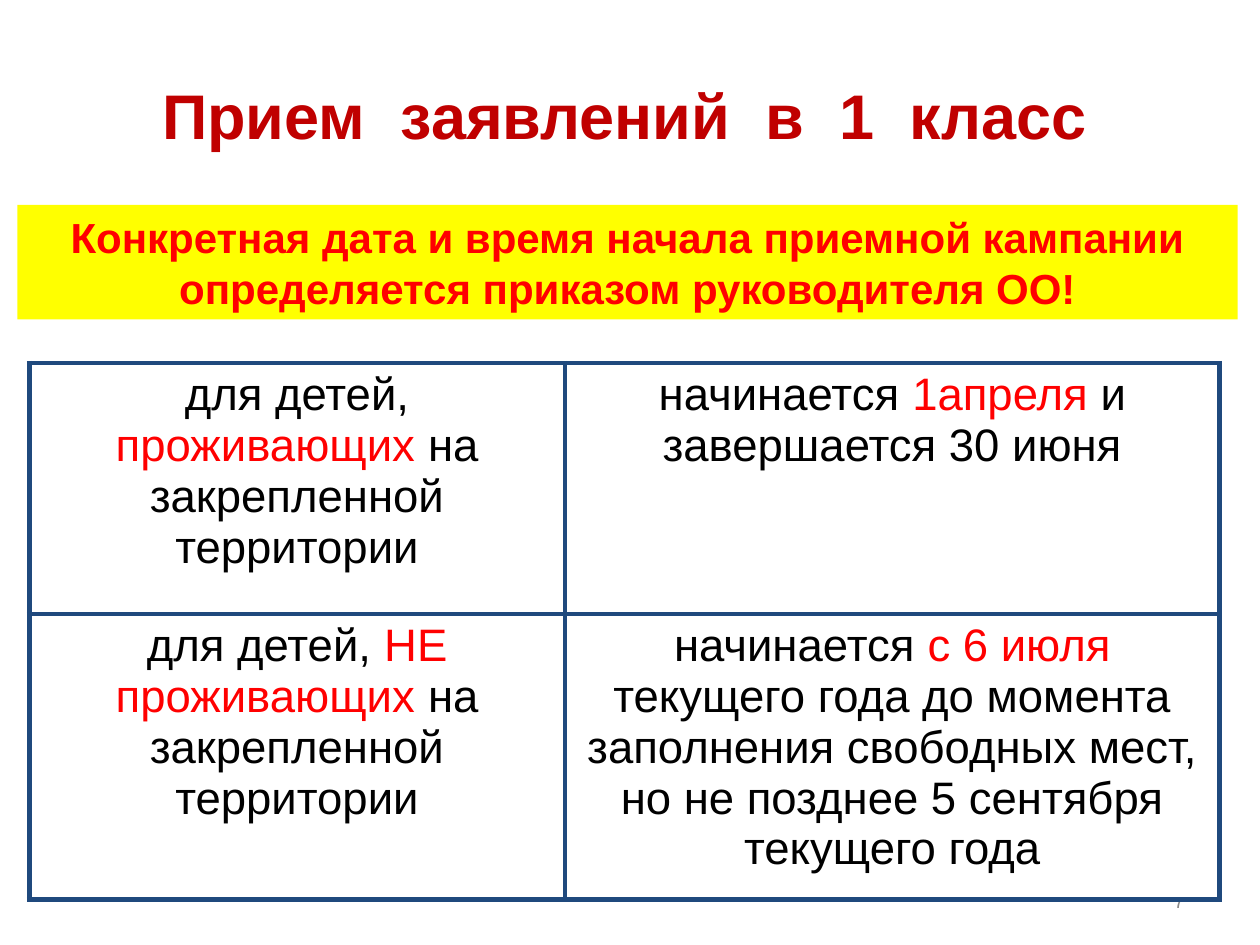
from itertools import product
from dataclasses import dataclass
from lxml.etree import SubElement
from pptx import Presentation
from pptx.dml.color import RGBColor
from pptx.enum.shapes import MSO_SHAPE
from pptx.enum.text import MSO_ANCHOR, PP_ALIGN
from pptx.oxml.ns import qn
from pptx.util import Cm, Pt

TITLE = ["Прием", "заявлений", "в", "1", "класс"]
NOTE = ("Конкретная дата и время начала приемной кампании "
        "определяется приказом руководителя ОО!")
PAGE = "7"
ROWS = [
    [("для детей, ", "проживающих", " на закрепленной территории"),
     ("начинается ", "1апреля ", "и завершается 30 июня")],
    [("для детей, ", "НЕ проживающих ", "на закрепленной территории"),
     ("начинается ", "с 6 июля ",
      "текущего года до момента заполнения свободных мест, "
      "но не позднее 5 сентября текущего года")],
]
WIDTHS = [10.8, 13.2]
HEIGHTS = [5.06, 5.76]


@dataclass(frozen=True)
class Theme:
    face: str = "Arial"
    title: str = "C00000"
    accent: str = "FF0000"
    ink: str = "000000"
    pale: str = "898989"
    band: str = "FFFF00"
    paper: str = "FFFFFF"
    edge: str = "1F497D"
    head: int = 36
    note: int = 24
    cell: int = 26
    page: int = 11
    rule: int = 3


LOOK = Theme()


def paint(fill, tone):
    fill.solid()
    fill.fore_color.rgb = RGBColor.from_string(tone)


def style(para, size, tone, bold=False, align=PP_ALIGN.CENTER):
    para.alignment = align
    font = para.font
    font.name, font.size, font.bold = LOOK.face, Pt(size), bold
    font.color.rgb = RGBColor.from_string(tone)


def add_box(slide, left, top, width, height):
    box = slide.shapes.add_textbox(Cm(left), Cm(top), Cm(width), Cm(height))
    box.text_frame.word_wrap = True
    box.text_frame.vertical_anchor = MSO_ANCHOR.MIDDLE
    return box.text_frame.paragraphs[0]


def add_title(slide):
    para = add_box(slide, 0.89, 0.91, 23.4, 2.8)
    style(para, LOOK.head, LOOK.title, True)
    for spot, word in enumerate(TITLE):
        if spot:
            gap = para.add_run()
            gap.text = " "
            gap._r.get_or_add_rPr().set("spc", "1000")
        para.add_run().text = word


def add_page(slide):
    para = add_box(slide, 18.21, 17.65, 5.92, 1.02)
    para.text = PAGE
    style(para, LOOK.page, LOOK.pale, align=PP_ALIGN.RIGHT)


def add_edges(cell):
    props = cell._tc.get_or_add_tcPr()
    for side in ("a:lnL", "a:lnR", "a:lnT", "a:lnB"):
        line = SubElement(props, qn(side), w=str(Pt(LOOK.rule)))
        fill = SubElement(line, qn("a:solidFill"))
        SubElement(fill, qn("a:srgbClr"), val=LOOK.edge)


def add_grid(slide):
    grid = slide.shapes.add_table(
        len(HEIGHTS), len(WIDTHS), Cm(0.59), Cm(7.32),
        Cm(sum(WIDTHS)), Cm(sum(HEIGHTS))).table
    for col, width in zip(grid.columns, WIDTHS):
        col.width = Cm(width)
    for row, height in zip(grid.rows, HEIGHTS):
        row.height = Cm(height)
    for r, c in product(range(len(HEIGHTS)), range(len(WIDTHS))):
        cell = grid.cell(r, c)
        add_edges(cell)
        paint(cell.fill, LOOK.paper)
        para = cell.text_frame.paragraphs[0]
        style(para, LOOK.cell, LOOK.ink)
        for text, tone in zip(ROWS[r][c], (LOOK.ink, LOOK.accent, LOOK.ink)):
            run = para.add_run()
            run.text = text
            run.font.color.rgb = RGBColor.from_string(tone)


def add_note(slide):
    band = slide.shapes.add_shape(
        MSO_SHAPE.RECTANGLE, Cm(0.35), Cm(4.13), Cm(24.6), Cm(2.31))
    band.shadow.inherit = False
    paint(band.fill, LOOK.band)
    band.line.fill.background()
    band.text_frame.word_wrap = True
    para = band.text_frame.paragraphs[0]
    para.text = NOTE
    style(para, LOOK.note, LOOK.accent, True)


def main():
    """Build the slide on first-grade admission dates."""
    deck = Presentation()
    deck.slide_width, deck.slide_height = Cm(25.4), Cm(19.05)
    slide = deck.slides.add_slide(deck.slide_layouts[6])
    for part in (add_title, add_page, add_grid, add_note):
        part(slide)
    deck.save("out.pptx")


if __name__ == "__main__":
    main()
